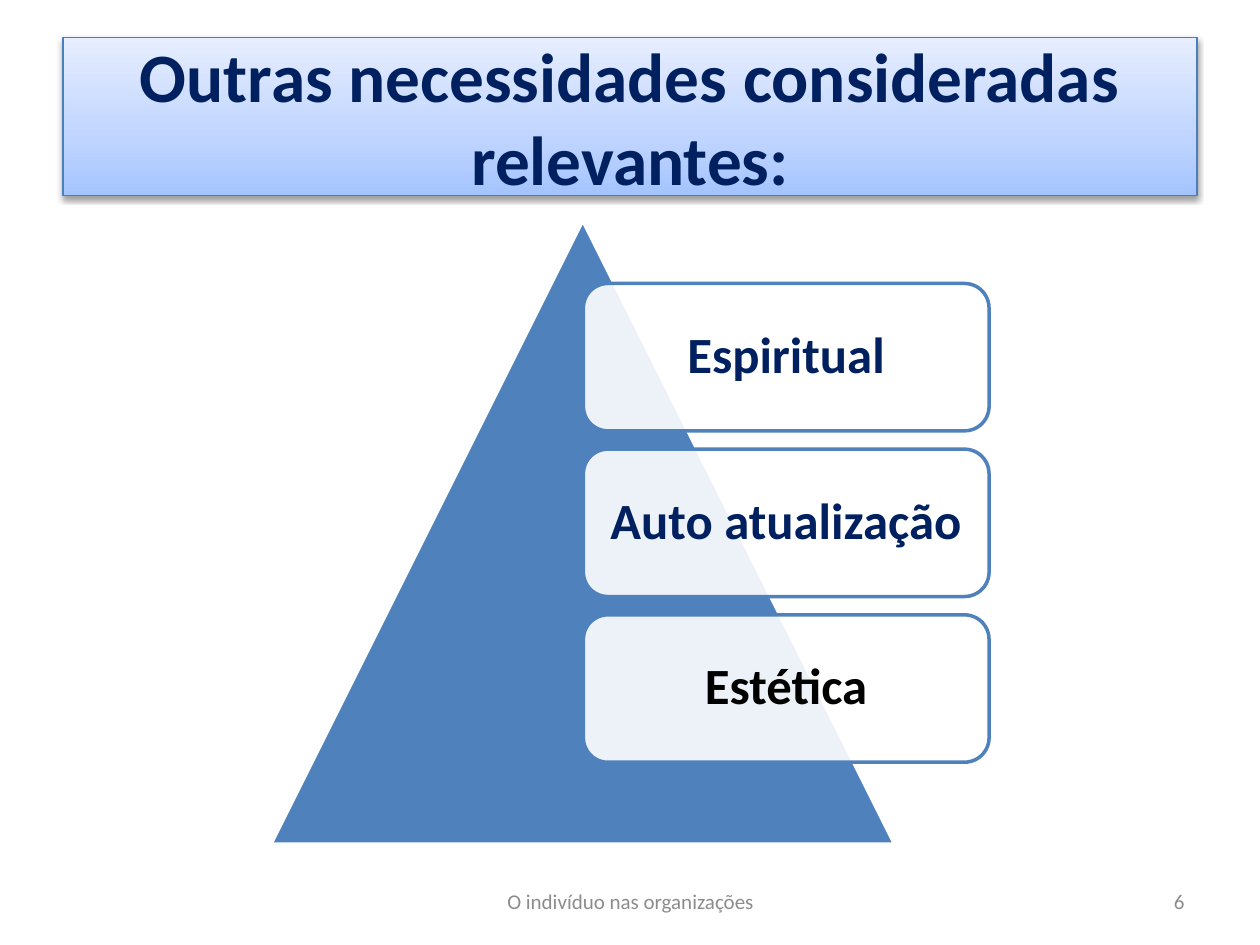
from dataclasses import dataclass

from lxml import etree
from pptx import Presentation
from pptx.dml.color import RGBColor
from pptx.enum.shapes import MSO_SHAPE
from pptx.enum.text import MSO_ANCHOR, MSO_AUTO_SIZE, PP_ALIGN
from pptx.oxml.ns import qn
from pptx.util import Inches, Pt

CENTER, RIGHT = PP_ALIGN.CENTER, PP_ALIGN.RIGHT
MIDDLE = MSO_ANCHOR.MIDDLE
NO_AUTOFIT = MSO_AUTO_SIZE.NONE
TRIANGLE = MSO_SHAPE.ISOSCELES_TRIANGLE
ROUNDED = MSO_SHAPE.ROUNDED_RECTANGLE

NAVY = RGBColor(0x00, 0x20, 0x60)
BLUE = RGBColor(0x4F, 0x81, 0xBD)
EDGE = RGBColor(0x4B, 0x7E, 0xBC)
GREY = RGBColor(0x8C, 0x8C, 0x8C)
BLACK = RGBColor(0x00, 0x00, 0x00)
WHITE = RGBColor(0xFF, 0xFF, 0xFF)
TITLE_STOPS = (
    (0, RGBColor(0xA4, 0xC4, 0xFF)),
    (35, RGBColor(0xBF, 0xD4, 0xFF)),
    (100, RGBColor(0xE6, 0xEE, 0xFF)),
)

FONT = "Calibri"
SLIDE_WIDTH, SLIDE_HEIGHT = Inches(10), Inches(7.5)
COLUMNS = 200  # square grid cells: 200 columns by 150 rows
CELL = SLIDE_WIDTH / COLUMNS


@dataclass(frozen=True)
class Area:
    """A rectangle in grid columns and rows."""
    column: float
    row: float
    columns: float
    rows: float

    def lengths(self) -> list[int]:
        return [round(value * CELL) for value in
                (self.column, self.row, self.columns, self.rows)]


@dataclass(frozen=True)
class Need:
    label: str
    color: RGBColor


@dataclass(frozen=True)
class Note:
    text: str
    area: Area
    align: PP_ALIGN


TITLE_AREA = Area(10, 6, 180, 25)
PYRAMID_AREA = Area(43, 35, 99, 99)
FIRST_CARD = Area(92.6, 45, 64.4, 23.4)
CARD_PITCH = 26.3
NEEDS = (
    Need("Espiritual", NAVY),
    Need("Auto atualização", NAVY),
    Need("Estética", BLACK),
)
NOTES = (
    Note("O indivíduo nas organizações", Area(68.4, 139, 63.4, 8), CENTER),
    Note("6", Area(143.4, 139, 46.6, 8), RIGHT),
)


def write(shape, text: str, size: float, color: RGBColor,
          align: PP_ALIGN = CENTER, bold: bool = False):
    frame = shape.text_frame
    frame.word_wrap = True
    frame.auto_size = NO_AUTOFIT
    frame.vertical_anchor = MIDDLE
    para = frame.paragraphs[0]
    para.alignment = align
    span = para.add_run()
    span.text = text
    span.font.name = FONT
    span.font.size = Pt(size)
    span.font.bold = bold
    span.font.color.rgb = color
    return frame


def add_color(parent, color: RGBColor):
    return etree.SubElement(parent, qn("a:srgbClr"), val=str(color))


def add_alpha(color_element, percent: int) -> None:
    etree.SubElement(color_element, qn("a:alpha"), val=str(percent * 1000))


def draw_shape(page, kind: MSO_SHAPE, area: Area, fill: RGBColor,
               line: RGBColor):
    shape = page.shapes.add_shape(kind, *area.lengths())
    shape.shadow.inherit = False
    shape.fill.solid()
    shape.fill.fore_color.rgb = fill
    shape.line.color.rgb = line
    shape.line.width = Pt(2)
    return shape


def format_title(title) -> None:
    title.left, title.top, title.width, title.height = TITLE_AREA.lengths()
    title.line.color.rgb = EDGE
    title.line.width = Pt(0.75)

    # Three-stop gradient running upwards
    title.fill.gradient()
    title.fill.gradient_angle = 90
    properties = title.element.spPr
    stops = properties.find(".//" + qn("a:gsLst"))
    stops.clear()
    for position, color in TITLE_STOPS:
        stop = etree.SubElement(stops, qn("a:gs"), pos=str(position * 1000))
        add_color(stop, color)

    # Soft shadow below
    effects = etree.SubElement(properties, qn("a:effectLst"))
    shadow = etree.SubElement(
        effects, qn("a:outerShdw"), blurRad=str(Pt(3.1)), dist=str(Pt(1.6)),
        dir=str(90 * 60000), rotWithShape="0")
    add_alpha(add_color(shadow, BLACK), 38)

    write(title, "Outras necessidades consideradas relevantes:", 39.6, NAVY,
          bold=True)


def draw_card(page, need: Need, index: int) -> None:
    area = Area(FIRST_CARD.column, FIRST_CARD.row + index * CARD_PITCH,
                FIRST_CARD.columns, FIRST_CARD.rows)
    card = draw_shape(page, ROUNDED, area, WHITE, BLUE)
    fill_color = card.element.spPr.find(qn("a:solidFill") + "/" + qn("a:srgbClr"))
    add_alpha(fill_color, 90)
    frame = write(card, need.label, 29, need.color, bold=True)
    frame.margin_left = frame.margin_right = Inches(0.12)
    frame.margin_top = frame.margin_bottom = Inches(0.12)
    frame.paragraphs[0].line_spacing = 0.9


def draw_note(page, note: Note) -> None:
    box = page.shapes.add_textbox(*note.area.lengths())
    write(box, note.text, 12, GREY, note.align)


def main() -> None:
    deck = Presentation()
    deck.slide_width, deck.slide_height = SLIDE_WIDTH, SLIDE_HEIGHT
    page = deck.slides.add_slide(deck.slide_layouts.get_by_name("Title Only"))

    format_title(page.shapes.title)

    # Pyramid with its cards
    draw_shape(page, TRIANGLE, PYRAMID_AREA, BLUE, WHITE)
    for index, need in enumerate(NEEDS):
        draw_card(page, need, index)

    # Footer and page number
    for note in NOTES:
        draw_note(page, note)

    deck.save("out.pptx")


if __name__ == "__main__":
    main()
